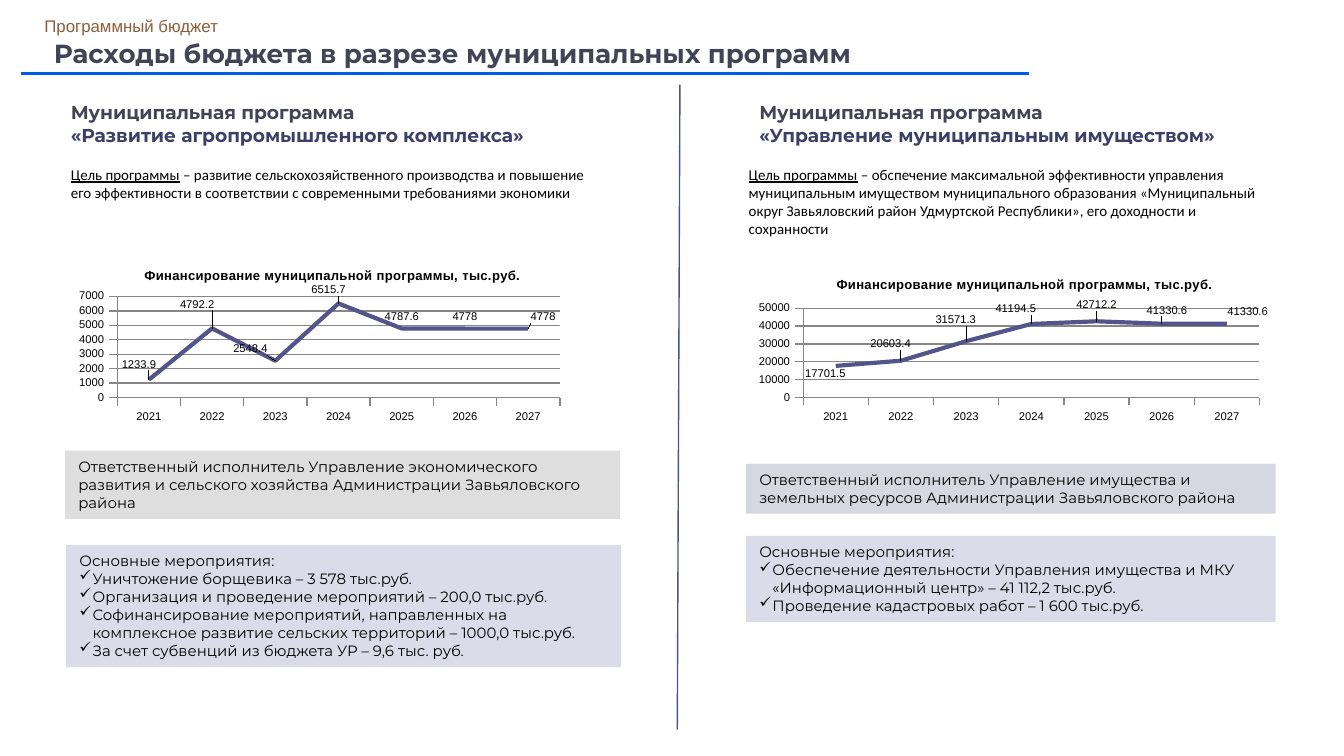
from pptx import Presentation
from pptx.chart.data import CategoryChartData
from pptx.dml.color import RGBColor
from pptx.enum.chart import XL_CHART_TYPE as ChartType, XL_LABEL_POSITION as LabelPos
from pptx.enum.chart import XL_MARKER_STYLE as Marker, XL_TICK_MARK as Tick
from pptx.enum.shapes import MSO_CONNECTOR as Conn, MSO_SHAPE as Shape
from pptx.enum.text import MSO_ANCHOR as Anchor, PP_ALIGN as Align
from pptx.oxml import parse_xml
from pptx.oxml.ns import nsdecls
from pptx.util import Cm, Pt

COLORS = {
    "black": "000000", "white": "FFFFFF", "heading": "424456", "name": "3E3F68",
    "section": "8B5D3D", "rule": "005EE4", "divider": "505188", "series": "53548A",
    "grid": "868686", "grey": "DEDEDE", "mist": "D6D7E0", "lilac": "DBDBE9",
}
YEARS = [str(year) for year in range(2021, 2028)]
CHART_TITLE = "Финансирование муниципальной программы, тыс.руб."

# Boxes are left, top, width, height in cm, relative to the column.
# Nudges move the value labels, as shares of the chart's size.
AGRICULTURE = {
    "name": "«Развитие агропромышленного комплекса»",
    "name_box": (0, 0, 9.96, 1.12),
    "goal": " – развитие сельскохозяйственного производства и повышение его "
            "эффективности в соответствии с современными требованиями экономики",
    "goal_box": (0, 1.22, 10.49, 1.27),
    "values": [1233.9, 4792.2, 2548.4, 6515.7, 4787.6, 4778, 4778],
    "scale": (7000, 1000),
    "chart_box": (0.28, 3, 9.4, 3.3),
    "title_at": (0.14, 0.07),
    "plot": (0.09, 0.25, 0.89, 0.58),
    "nudges": [(-0.02, -0.02), (-0.03, -0.07), (-0.05, 0), (-0.02, -0.01),
               (0, 0), (0, 0), (0.03, 0)],
    "executor": "Ответственный исполнитель Управление экономического развития и "
                "сельского хозяйства Администрации Завьяловского района",
    "executor_box": (0.14, 6.74, 10.49, 1.29),
    "executor_fill": "grey",
    "activities": [
        "Уничтожение борщевика – 3 578 тыс.руб.",
        "Организация и проведение мероприятий – 200,0 тыс.руб.",
        "Софинансирование мероприятий, направленных на комплексное развитие "
        "сельских территорий – 1000,0 тыс.руб.",
        "За счет субвенций из бюджета УР – 9,6 тыс. руб.",
    ],
    "activities_box": (0.16, 8.52, 10.49, 2.31),
}
PROPERTY = {
    "name": "«Управление муниципальным имуществом»",
    "name_box": (0, 0, 11.3, 1.12),
    "goal": " – обспечение максимальной эффективности управления муниципальным "
            "имуществом муниципального образования «Муниципальный округ Завьяловский "
            "район Удмуртской Республики», его доходности и сохранности",
    "goal_box": (-0.2, 1.22, 10.24, 1.63),
    "values": [17701.5, 20603.4, 31571.3, 41194.5, 42712.2, 41330.6, 41330.6],
    "scale": (50000, 10000),
    "chart_box": (0.1, 3.25, 9.8, 3.07),
    "title_at": (0.16, 0.05),
    "plot": (0.1, 0.26, 0.88, 0.55),
    "nudges": [(-0.02, 0.12), (-0.02, -0.03), (-0.02, -0.06), (-0.03, -0.02),
               (0, -0.03), (0.01, -0.01), (0.04, 0)],
    "executor": "Ответственный исполнитель Управление имущества и земельных ресурсов "
                "Администрации Завьяловского района",
    "executor_box": (0, 6.99, 10.01, 0.94),
    "executor_fill": "mist",
    "activities": [
        "Обеспечение деятельности Управления имущества и МКУ «Информационный центр» "
        "– 41 112,2 тыс.руб.",
        "Проведение кадастровых работ – 1 600 тыс.руб.",
    ],
    "activities_box": (0, 8.35, 10.01, 1.63),
}


def rgb(name):
    return RGBColor.from_string(COLORS[name])


def within(origin, box):
    """Turn a box relative to origin into slide lengths."""
    x, y, w, h = box
    return Cm(origin[0] + x), Cm(origin[1] + y), Cm(w), Cm(h)


def add_text(slide, box, paragraphs, size=8, font="Montserrat", color="black", bold=False,
             fill=None, anchor=Anchor.TOP, inset=(0.25, 0.13), spacing=None, bullets=False):
    """Place paragraphs, each a list of (text, run format) pairs; bullets skip the first."""
    if fill:
        sp = slide.shapes.add_shape(Shape.RECTANGLE, *box)
        sp.shadow.inherit = False
        sp.fill.solid()
        sp.fill.fore_color.rgb = rgb(fill)
        sp.line.fill.background()
    else:
        sp = slide.shapes.add_textbox(*box)
    tf = sp.text_frame
    tf.word_wrap = True
    tf.vertical_anchor = anchor
    tf.margin_left = tf.margin_right = Cm(inset[0])
    tf.margin_top = tf.margin_bottom = Cm(inset[1])
    for i, runs in enumerate(paragraphs):
        p = tf.add_paragraph() if i else tf.paragraphs[0]
        p.alignment = Align.LEFT
        p.line_spacing = spacing
        for text, style in runs:
            r = p.add_run()
            r.text = text
            r.font.size, r.font.name, r.font.bold = Pt(size), font, bold
            r.font.underline = style.get("underline", False)
            r.font.color.rgb = rgb(style.get("color", color))
        if bullets and i:
            add_bullet(p)


def add_bullet(p):
    pPr = p._p.get_or_add_pPr()
    pPr.set("marL", str(Cm(0.25)))
    pPr.set("indent", str(-Cm(0.25)))
    ns = nsdecls("a")
    pPr.append(parse_xml(f'<a:buClr {ns}><a:srgbClr val="{COLORS["black"]}"/></a:buClr>'))
    pPr.append(parse_xml(f'<a:buChar {ns} char="✓"/>'))


def manual_layout(target="", mode="", **values):
    parts = f'<c:layoutTarget val="{target}"/>' if target else ""
    if mode:
        parts += "".join(f'<c:{axis}Mode val="{mode}"/>' for axis in "xy")
    parts += "".join(f'<c:{key} val="{value}"/>' for key, value in values.items())
    return parse_xml(f'<c:layout {nsdecls("c")}><c:manualLayout>{parts}'
                     "</c:manualLayout></c:layout>")


def set_layout(element, layout, after=None):
    for old in element.findall(layout.tag):
        element.remove(old)
    if after is None:
        element.insert(0, layout)
    else:
        after.addnext(layout)


def add_funding_chart(slide, box, program):
    data = CategoryChartData()
    data.categories = YEARS
    data.add_series("Series 1", program["values"])
    chart = slide.shapes.add_chart(ChartType.LINE, *box, data).chart
    chart.has_legend = False
    chart.font.size, chart.font.name = Pt(6), "Arial"
    chart.font.color.rgb = rgb("black")

    title = chart.chart_title
    r = title.text_frame.paragraphs[0].add_run()
    r.text = CHART_TITLE
    r.font.size, r.font.name, r.font.bold = Pt(7), "Arial", True
    r.font.color.rgb = rgb("black")
    r.font._element.set("spc", "30")
    x, y = program["title_at"]
    set_layout(title._element, manual_layout(mode="edge", x=x, y=y), title._element.tx)
    title.include_in_layout = False
    x, y, w, h = program["plot"]
    set_layout(chart._chartSpace.chart.plotArea,
               manual_layout("inner", "edge", x=x, y=y, w=w, h=h))

    values = chart.value_axis
    values.minimum_scale = 0
    values.maximum_scale, values.major_unit = program["scale"]
    values.has_major_gridlines = True
    for axis in (chart.category_axis, values):
        axis.major_tick_mark = Tick.OUTSIDE
    for line in (chart.category_axis.format.line, values.format.line,
                 values.major_gridlines.format.line):
        line.color.rgb, line.width = rgb("grid"), Pt(0.75)

    series = chart.plots[0].series[0]
    series.smooth = False
    series.marker.style = Marker.NONE
    series.format.line.color.rgb, series.format.line.width = rgb("series"), Pt(2.25)
    series.data_labels.show_value = True
    for i in range(len(YEARS)):
        series.points[i].data_label.position = LabelPos.ABOVE
    for label, (x, y) in zip(series._element.xpath(".//c:dLbl"), program["nudges"]):
        set_layout(label, manual_layout(x=x, y=y), label[0])


def add_header(slide, origin):
    add_text(slide, within(origin, (0.46, 0.38, 22.86, 0.94)),
             [[("Расходы бюджета в разрезе муниципальных программ", {})]], size=14,
             color="heading", bold=True, anchor=Anchor.MIDDLE, inset=(0.18, 0.1), spacing=0.9)
    add_text(slide, within(origin, (0.28, 0, 4.98, 0.58)), [[("Программный бюджет", {})]],
             size=9, font="Arial", color="section", inset=(0.18, 0.1))
    rule = slide.shapes.add_shape(Shape.RECTANGLE, *within(origin, (0, 1.15, 19.08, 0.08)))
    rule.shadow.inherit = False
    rule.fill.solid()
    rule.fill.fore_color.rgb = rgb("rule")
    rule.line.color.rgb, rule.line.width = rgb("white"), Pt(0.75)


def add_divider(slide, start, end):
    line = slide.shapes.add_connector(Conn.STRAIGHT, *map(Cm, start + end))
    line.line.color.rgb, line.line.width = rgb("divider"), Pt(0.75)
    line._element.spPr.append(parse_xml(f'<a:effectLst {nsdecls("a")}/>'))


def add_program(slide, origin, program):
    add_text(slide, within(origin, program["name_box"]),
             [[("Муниципальная программа", {})], [(program["name"], {"color": "name"})]],
             size=10, color="heading", bold=True)
    add_text(slide, within(origin, program["goal_box"]),
             [[("Цель программы", {"underline": True}), (program["goal"], {})]],
             font="Calibri")
    add_funding_chart(slide, within(origin, program["chart_box"]), program)
    add_text(slide, within(origin, program["executor_box"]), [[(program["executor"], {})]],
             fill=program["executor_fill"], anchor=Anchor.MIDDLE)
    lines = ["Основные мероприятия:"] + program["activities"]
    add_text(slide, within(origin, program["activities_box"]),
             [[(line, {})] for line in lines], fill="lilac", bullets=True)


def main():
    prs = Presentation()
    prs.slide_width, prs.slide_height = Cm(25.4), Cm(14.29)
    slide = prs.slides.add_slide(prs.slide_layouts[6])
    add_header(slide, (0.38, 0.2))
    add_divider(slide, (12.85, 1.6), (12.8, 13.79))
    add_program(slide, (1.09, 1.78), AGRICULTURE)
    add_program(slide, (14.1, 1.78), PROPERTY)
    prs.save("out.pptx")


if __name__ == "__main__":
    main()
